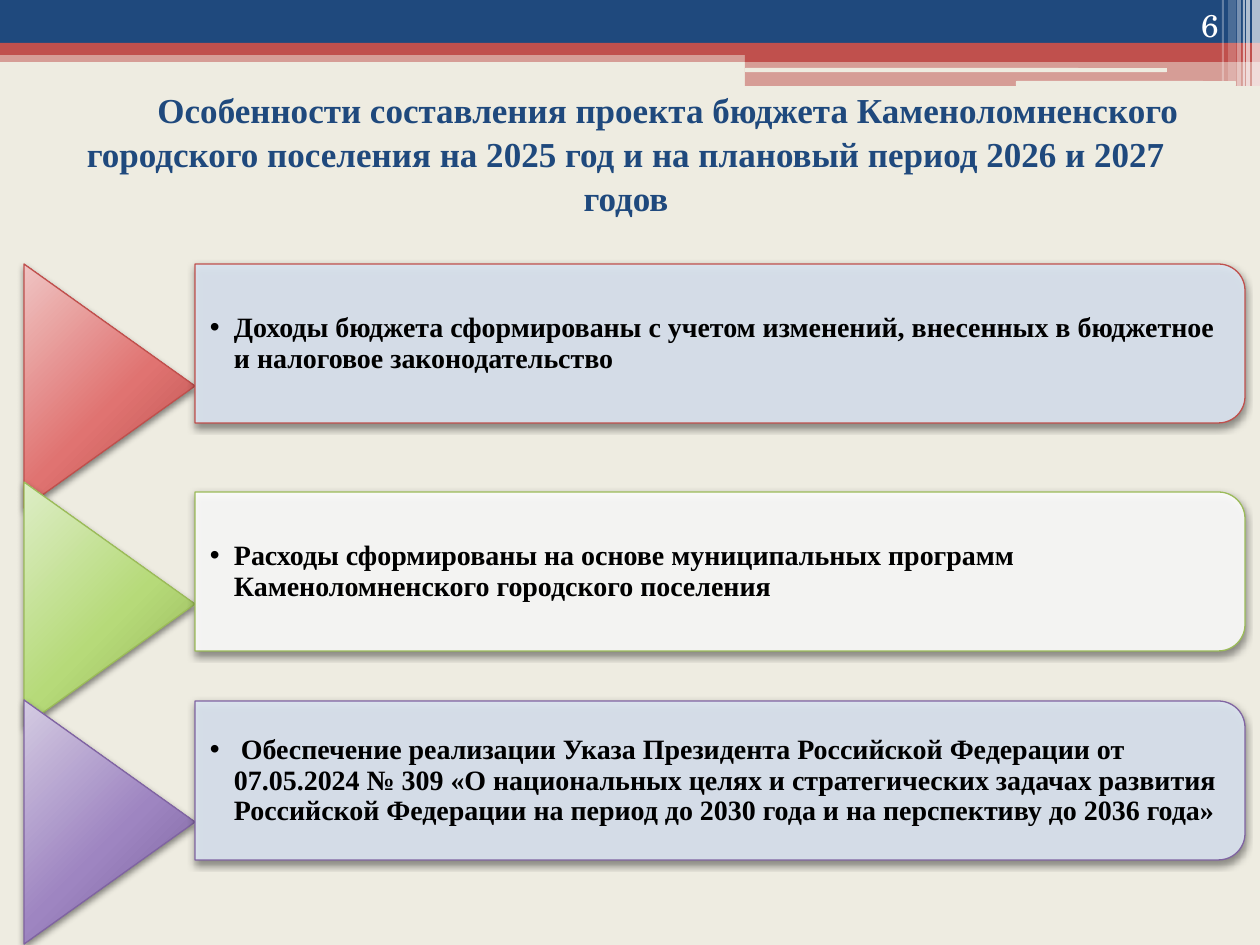
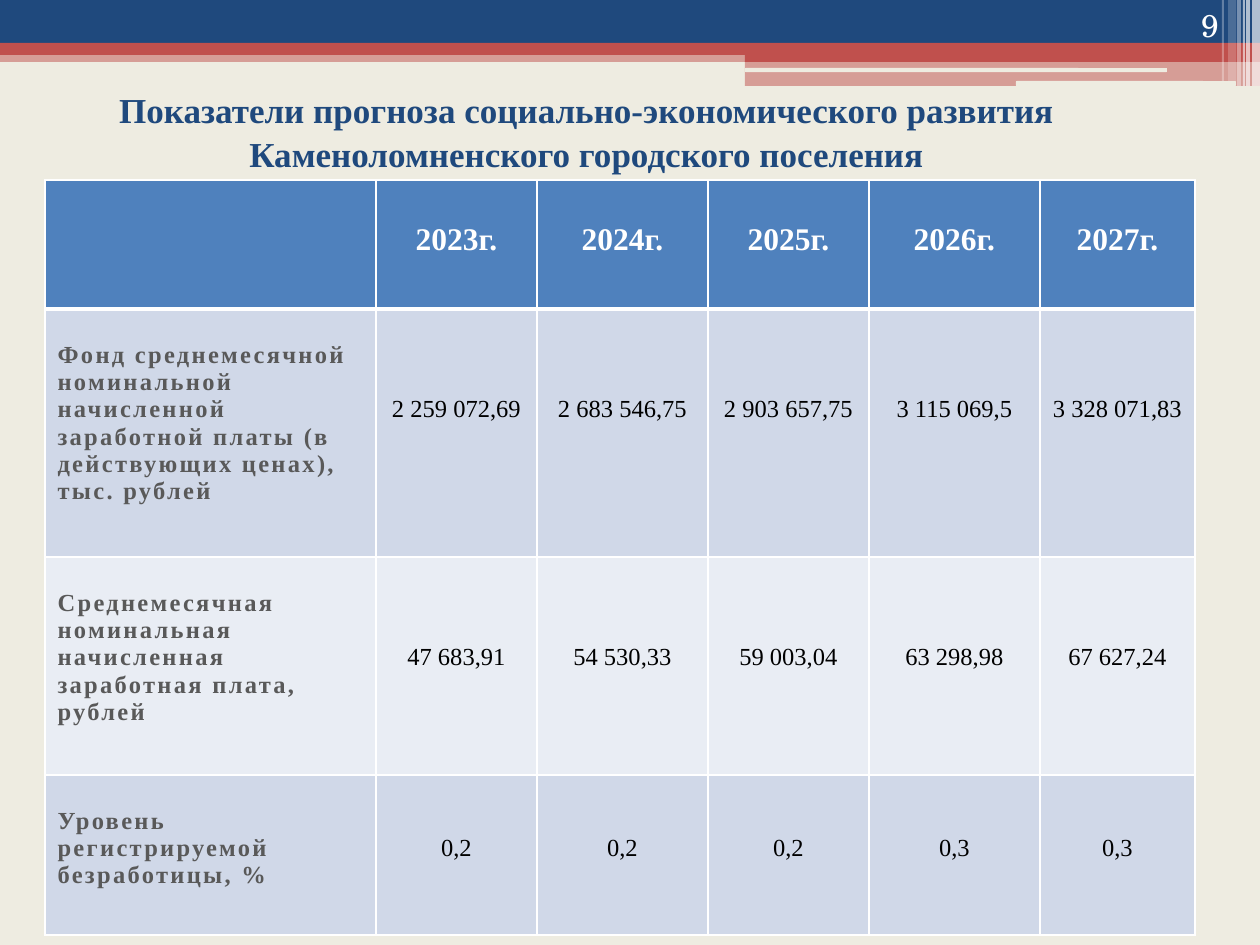
"""Build two budget slides: key features as arrows and a forecast table."""
from lxml import etree
from pptx import Presentation
from pptx import util as u
from pptx.dml.color import RGBColor
from pptx.enum import shapes, text
from pptx.oxml import ns

PX = 914400 / 126
NAVY = RGBColor(0x1F, 0x49, 0x7D)
RED = RGBColor(0xC0, 0x50, 0x4D)
GREEN = RGBColor(0x9B, 0xBB, 0x59)
PURPLE = RGBColor(0x80, 0x64, 0xA2)
CREAM = RGBColor(0xEE, 0xEC, 0xE1)
WHITE = RGBColor(0xFF, 0xFF, 0xFF)
BLACK = RGBColor(0, 0, 0)
GREY = RGBColor(0x59, 0x59, 0x59)
PALE = RGBColor(0xDC, 0xE6, 0xF2)
BLUE = RGBColor(0x4F, 0x81, 0xBD)
BANDS = [RGBColor(0xD0, 0xD8, 0xE8), RGBColor(0xE9, 0xED, 0xF4)]
SERIF, SCHOOL = "Times New Roman", "TeX Gyre Schola"
KIND = shapes.MSO_SHAPE
MID, END = text.PP_ALIGN.CENTER, text.PP_ALIGN.RIGHT

BARS = [
    (0, 50, 1260, 12, RED, 50),
    (0, 0, 1260, 43, NAVY, 100),
    (0, 43, 1260, 12, RED, 100),
    (745, 49, 515, 13, RED, 100),
    (745, 61, 515, 25, RED, 50),
]
SLITS = [(745, 68, 422, 4, CREAM, 100), (1016, 81, 220, 5, CREAM, 100)]
STRIPES = [(1252, 8, 86, 65), (1246, 4, 86, 65), (1243, 2, 86, 60),
           (1237, 4, 86, 40), (1228, 8, 81, 20), (1222, 2, 81, 30)]

GOALS_TITLE = ("Особенности составления проекта бюджета Каменоломненского "
               "городского поселения на 2025 год и на плановый период 2026 и 2027 годов")
GOALS = [
    ("Доходы бюджета сформированы с учетом изменений, внесенных в бюджетное "
     "и налоговое законодательство",
     264, RED, PALE, ("EFC4C3", "E07371", "B34B48")),
    ("Расходы сформированы на основе муниципальных программ "
     "Каменоломненского городского поселения",
     492, GREEN, WHITE, ("DDEDC6", "B6DA79", "90AE53")),
    (" Обеспечение реализации Указа Президента Российской Федерации от "
     "07.05.2024 № 309 «О национальных целях и стратегических задачах развития "
     "Российской Федерации на период до 2030 года и на перспективу до 2036 года»",
     701, PURPLE, PALE, ("D4CBE2", "9E85C1", "775D97")),
]

RATES_TITLE = ("Показатели прогноза социально-экономического развития "
               "Каменоломненского городского поселения")
RATES = [
    ("", "2023г.", "2024г.", "2025г.", "2026г.", "2027г."),
    ("Фонд среднемесячной номинальной начисленной заработной платы "
     "(в действующих ценах), тыс. рублей",
     "2 259 072,69", "2 683 546,75", "2 903 657,75", "3 115 069,5", "3 328 071,83"),
    ("Среднемесячная номинальная начисленная заработная плата, рублей",
     "47 683,91", "54 530,33", "59 003,04", "63 298,98", "67 627,24"),
    ("Уровень регистрируемой безработицы, %", "0,2", "0,2", "0,2", "0,3", "0,3"),
]
COLS = [331, 161, 171, 161, 171, 155]
ROWS = [129, 248, 218, 160]
DROPS = [42, 87, 87, 60]
LABEL_DROP = 33


def px(*sizes):
    """Turn px lengths into EMU."""
    return [u.Emu(round(size * PX)) for size in sizes]


def sub(parent, tag, **attrs):
    """Add a drawing element with attributes."""
    node = etree.SubElement(parent, ns.qn("a:" + tag))
    for key, value in attrs.items():
        node.set(key, str(value))
    return node


def write(frame, words, size=20, color=NAVY, bold=True, font=SERIF, align=None,
          left=0, first=0, lead=None, bullet=None, spread=0):
    """Fill a text frame with one formatted paragraph."""
    frame.word_wrap = True
    para = frame.paragraphs[0]
    props = para._p.get_or_add_pPr()
    if left or first:
        props.set("marL", str(px(left)[0]))
        props.set("indent", str(px(first)[0]))
    if bullet:
        sub(props, "buFont", typeface="Arial")
        sub(props, "buChar", char=bullet)
    if align is not None:
        para.alignment = align
    if lead:
        para.line_spacing = lead
    run = para.add_run()
    run.text = words
    run.font.size, run.font.bold, run.font.name = u.Pt(size), bold, font
    run.font.color.rgb = color
    if spread:
        run._r.get_or_add_rPr().set("spc", str(spread))


def draw(slide, kind, box, color, alpha=100):
    """Add a flat shape without a line."""
    shape = slide.shapes.add_shape(kind, *px(*box))
    shape.shadow.inherit = False
    shape.fill.solid()
    shape.fill.fore_color.rgb = color
    shape.line.fill.background()
    if alpha < 100:
        tint = shape._element.spPr.find(".//" + ns.qn("a:srgbClr"))
        sub(tint, "alpha", val=alpha * 1000)
    return shape


def raise_up(slide, kind, box, color, edge, alpha=100):
    """Add a shape turned by 90 degrees that covers the box and casts a shadow."""
    x, y, wide, high = box
    gap = (wide - high) / 2
    shape = draw(slide, kind, (x + gap, y - gap, high, wide), color, alpha)
    shape.rotation = 90
    shape.line.color.rgb = edge
    shape.line.width = u.Pt(0.75)
    glow = sub(shape._element.spPr.find(ns.qn("a:effectLst")), "outerShdw",
               blurRad=u.Pt(4), dist=u.Pt(2), dir=5400000, rotWithShape=0)
    sub(sub(glow, "srgbClr", val="000000"), "alpha", val=45000)
    return shape


def blend(shape, tones):
    """Replace a solid fill by a radial gradient."""
    solid = shape._element.spPr.find(ns.qn("a:solidFill"))
    grad = etree.Element(ns.qn("a:gradFill"), rotWithShape="1")
    stops = sub(grad, "gsLst")
    for place, tone in zip((0, 55, 100), tones):
        sub(sub(stops, "gs", pos=place * 1000), "srgbClr", val=tone)
    sub(sub(grad, "path", path="circle"), "fillToRect",
        l=-40000, t=-90000, r=140000, b=190000)
    solid.getparent().replace(solid, grad)


def start(prs, title, box, number, first=0):
    """Add a slide with its bands, title and number."""
    slide = prs.slides.add_slide(prs.slide_layouts[5])
    for *place, color, alpha in BARS:
        draw(slide, KIND.RECTANGLE, place, color, alpha)
    for *place, color, alpha in SLITS:
        draw(slide, KIND.ROUNDED_RECTANGLE, place, color, alpha)
    for x, wide, high, alpha in STRIPES:
        draw(slide, KIND.RECTANGLE, (x, 0, wide, high), WHITE, alpha)
    head = slide.shapes.title
    head.left, head.top, head.width, head.height = px(*box)
    frame = head.text_frame
    frame.auto_size = text.MSO_AUTO_SIZE.NONE
    frame.vertical_anchor = text.MSO_ANCHOR.MIDDLE
    frame.margin_top = frame.margin_bottom = 0
    write(frame, title, align=MID, left=9, first=first, lead=1.05)
    page = slide.shapes.add_textbox(*px(1126, 0, 105, 50)).text_frame
    page.vertical_anchor = text.MSO_ANCHOR.BOTTOM
    write(page, number, size=18, color=WHITE, bold=False, font=SCHOOL, align=END)
    return slide


def show_goals(prs):
    """Build the slide with three arrows and their statements."""
    slide = start(prs, GOALS_TITLE, (44, 89, 1155, 127), "6", first=84)
    for i, (words, top, edge, color, tones) in enumerate(GOALS):
        arrow = raise_up(slide, KIND.ISOSCELES_TRIANGLE,
                         (24, 264 + 218 * i, 171, 244), edge, edge)
        blend(arrow, tones)
        raise_up(slide, KIND.ROUND_2_SAME_RECTANGLE, (195, top, 1050, 159),
                 color, edge, alpha=90)
        frame = slide.shapes.add_textbox(*px(195, top + 8, 1042, 144)).text_frame
        frame.vertical_anchor = text.MSO_ANCHOR.MIDDLE
        frame.margin_left, frame.margin_top = px(15, 1)
        frame.margin_right = frame.margin_bottom = frame.margin_top
        write(frame, words, size=16, color=BLACK, left=24, first=-24,
              lead=0.9, bullet="•")


def rule(cell, row):
    """Give a cell white borders, thick under the header."""
    props = cell._tc.get_or_add_tcPr()
    thick = {"T": row == 1, "B": row == 0}
    for i, side in enumerate("LRTB"):
        line = sub(props, "ln" + side, w=u.Pt(3 if thick.get(side) else 1))
        sub(sub(line, "solidFill"), "srgbClr", val=WHITE)
        props.insert(i, line)


def show_rates(prs):
    """Build the slide with the forecast table."""
    slide = start(prs, RATES_TITLE, (15, 81, 1134, 99), "9")
    table = slide.shapes.add_table(
        len(ROWS), len(COLS), *px(45, 180, sum(COLS), sum(ROWS))).table
    for col, wide in zip(table.columns, px(*COLS)):
        col.width = wide
    for r, (row, high) in enumerate(zip(RATES, px(*ROWS))):
        table.rows[r].height = high
        for c, words in enumerate(row):
            cell = table.cell(r, c)
            cell.fill.solid()
            cell.fill.fore_color.rgb = BANDS[(r - 1) % 2] if r else BLUE
            rule(cell, r)
            cell.margin_top = px(DROPS[r] if c or not r else LABEL_DROP)[0]
            if not words:
                continue
            if r == 0:
                look = dict(size=18, color=WHITE, align=MID)
            elif c == 0:
                look = dict(size=14, color=GREY, spread=130)
            else:
                look = dict(size=14, color=BLACK, bold=False, align=MID)
            write(cell.text_frame, words, **look)


def main():
    """Build and save the slides."""
    prs = Presentation()
    prs.slide_width, prs.slide_height = px(1260, 945)
    back = prs.slide_master.background.fill
    back.solid()
    back.fore_color.rgb = CREAM
    show_goals(prs)
    show_rates(prs)
    prs.save("out.pptx")


if __name__ == "__main__":
    main()
